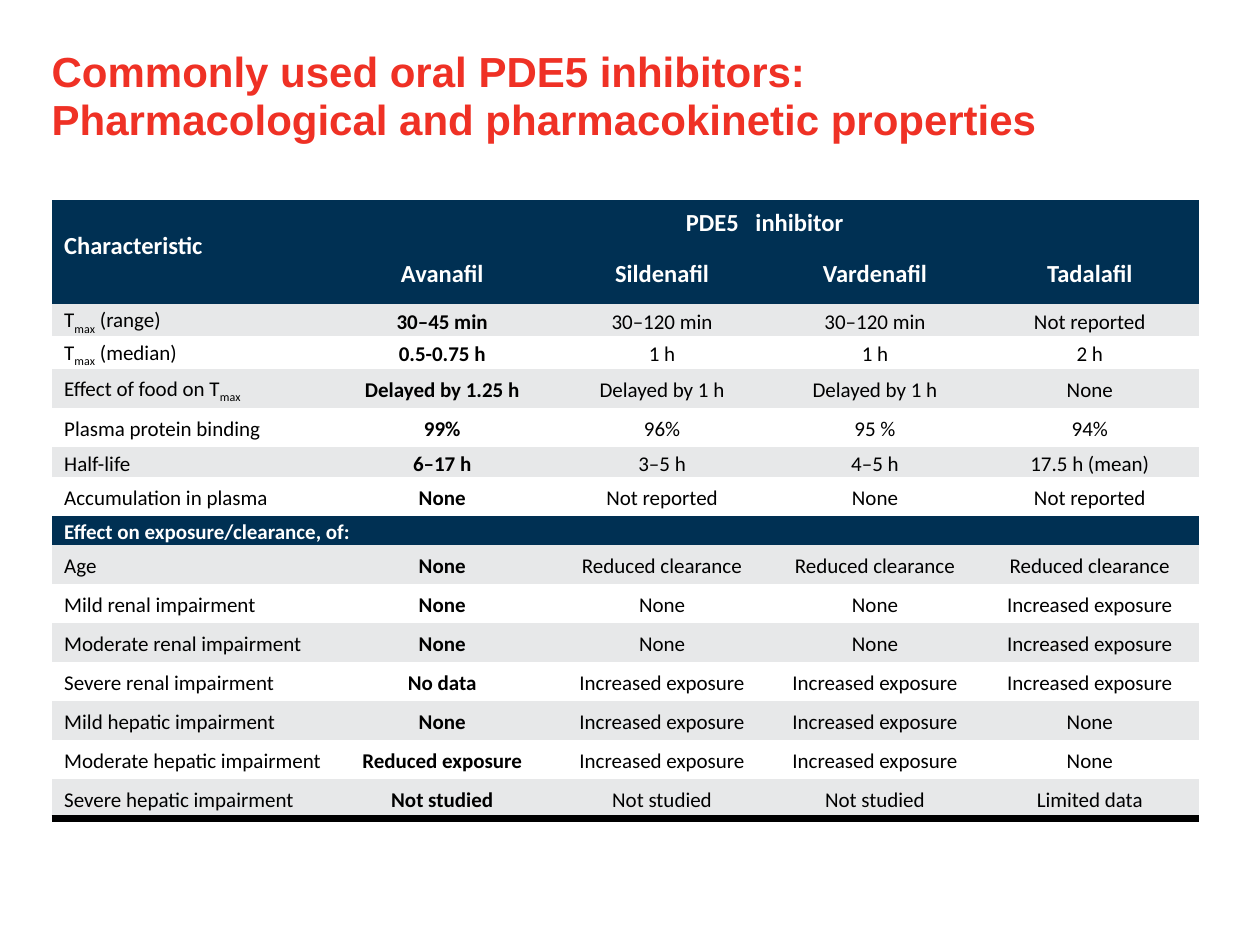
from lxml import etree
from pptx import Presentation
from pptx import util as u
from pptx.dml.color import RGBColor
from pptx.enum import text
from pptx.oxml.ns import qn

TITLE = "Commonly used oral PDE5 inhibitors:\vPharmacological and pharmacokinetic properties"
SECTION = "Effect on exposure/clearance, of:"
ROWS = [
    ("Characteristic", "PDE5   inhibitor", "", "", ""),
    ("", "Avanafil", "Sildenafil", "Vardenafil", "Tadalafil"),
    ("Tmax (range)", "30–45 min", "30–120 min", "30–120 min", "Not reported"),
    ("Tmax (median)", "0.5-0.75 h", "1 h", "1 h", "2 h"),
    ("Effect of food on Tmax", "Delayed by 1.25 h", "Delayed by 1 h", "Delayed by 1 h", "None"),
    ("Plasma protein binding", "99%", "96%", "95 %", "94%"),
    ("Half-life", "6–17 h", "3–5 h", "4–5 h", "17.5 h (mean)"),
    ("Accumulation in plasma", "None", "Not reported", "None", "Not reported"),
    (SECTION, "", "", "", ""),
    ("Age", "None", "Reduced clearance", "Reduced clearance", "Reduced clearance"),
    ("Mild renal impairment", "None", "None", "None", "Increased exposure"),
    ("Moderate renal impairment", "None", "None", "None", "Increased exposure"),
    ("Severe renal impairment", "No data", "Increased exposure", "Increased exposure", "Increased exposure"),
    ("Mild hepatic impairment", "None", "Increased exposure", "Increased exposure", "None"),
    ("Moderate hepatic impairment", "Reduced exposure", "Increased exposure", "Increased exposure", "None"),
    ("Severe hepatic impairment", "Not studied", "Not studied", "Not studied", "Limited data"),
]
COLUMN_WIDTHS = [2.21, 1.78, 1.71, 1.67, 1.74]
ROW_HEIGHT = 0.31
SPECIAL_HEIGHTS = {0: 0.32, 1: 0.5, 2: 0.26, 3: 0.26, 6: 0.23, 8: 0.23}
HEADER_ROWS = 2
SECTION_ROW = 8
LEFT, TITLE_TOP, TABLE_TOP = 0.41, 0.34, 1.59
NAVY, GREY, WHITE, BLACK, RED = "003053", "E7E8E9", "FFFFFF", "000000", "EF3125"
PLAIN_STYLE = "{2D5ABB26-0587-4C30-8999-92F81FD0307C}"


def colour(value):
    return RGBColor.from_string(value)


def style(font, name, size, shade, bold):
    font.name, font.size, font.bold = name, u.Pt(size), bold
    font.color.rgb = colour(shade)


def set_margins(target, left, top, right, bottom):
    target.margin_left, target.margin_top = u.Inches(left), u.Inches(top)
    target.margin_right, target.margin_bottom = u.Inches(right), u.Inches(bottom)


def add_title(page):
    box = page.shapes.title
    box.left, box.top = u.Inches(LEFT), u.Inches(TITLE_TOP)
    box.width, box.height = u.Inches(9), u.Inches(1.25)
    frame = box.text_frame
    frame.text = TITLE
    frame.auto_size = text.MSO_AUTO_SIZE.NONE
    frame.vertical_anchor = text.MSO_ANCHOR.TOP
    set_margins(frame, 0, 0.05, 0, 0.05)
    para = frame.paragraphs[0]
    para.alignment, para.line_spacing = text.PP_ALIGN.LEFT, 0.95
    for span in para.runs:
        style(span.font, "Arial", 24, RED, True)


def write_cell(cell, content, row, column):
    header, section = row < HEADER_ROWS, row == SECTION_ROW
    dark = header or section
    cell.fill.solid()
    cell.fill.fore_color.rgb = colour(NAVY if dark else WHITE if row % 2 and row < SECTION_ROW or
                                      row > SECTION_ROW and row % 2 == 0 else GREY)
    cell.vertical_anchor = text.MSO_ANCHOR.MIDDLE
    set_margins(cell, 0.06 if column else 0.1, 0, 0.06, 0)
    para = cell.text_frame.paragraphs[0]
    para.alignment = text.PP_ALIGN.CENTER if column else text.PP_ALIGN.LEFT
    para.line_spacing = 1.15
    for piece in filter(None, content.partition("max")):
        span = para.add_run()
        span.text = piece
        style(span.font, "Calibri", 14 if header else 12, WHITE if dark else BLACK, dark or column == 1)
        if piece == "max":
            span.font._element.set("baseline", "-25000")


def add_bottom_rule(cell):
    properties = cell._tc.get_or_add_tcPr()
    line = etree.Element(qn("a:lnB"), w=str(u.Pt(4.5)))
    fill = etree.SubElement(line, qn("a:solidFill"))
    etree.SubElement(fill, qn("a:srgbClr"), val=BLACK)
    properties.insert(0, line)


def add_properties_table(page):
    heights = [SPECIAL_HEIGHTS.get(row, ROW_HEIGHT) for row in range(len(ROWS))]
    table = page.shapes.add_table(
        len(ROWS), len(COLUMN_WIDTHS), u.Inches(LEFT), u.Inches(TABLE_TOP),
        u.Inches(sum(COLUMN_WIDTHS)), u.Inches(sum(heights))).table
    table._tbl.tblPr.find(qn("a:tableStyleId")).text = PLAIN_STYLE
    table.first_row = table.horz_banding = False
    for column, width in zip(table.columns, COLUMN_WIDTHS):
        column.width = u.Inches(width)
    for row, height in zip(table.rows, heights):
        row.height = u.Inches(height)
    for row, contents in enumerate(ROWS):
        for column, content in enumerate(contents):
            write_cell(table.cell(row, column), content, row, column)
    table.cell(0, 0).merge(table.cell(1, 0))
    table.cell(0, 1).merge(table.cell(0, 4))
    table.cell(SECTION_ROW, 0).merge(table.cell(SECTION_ROW, 4))
    heading = table.cell(0, 0)
    heading.vertical_anchor = text.MSO_ANCHOR.TOP
    heading.margin_top = u.Inches(0.21)
    for column in range(len(COLUMN_WIDTHS)):
        add_bottom_rule(table.cell(len(ROWS) - 1, column))


def main():
    deck = Presentation()
    deck.slide_width, deck.slide_height = u.Inches(10), u.Inches(7.5)
    page = deck.slides.add_slide(deck.slide_layouts[5])
    add_title(page)
    add_properties_table(page)
    deck.save("out.pptx")


if __name__ == "__main__":
    main()
